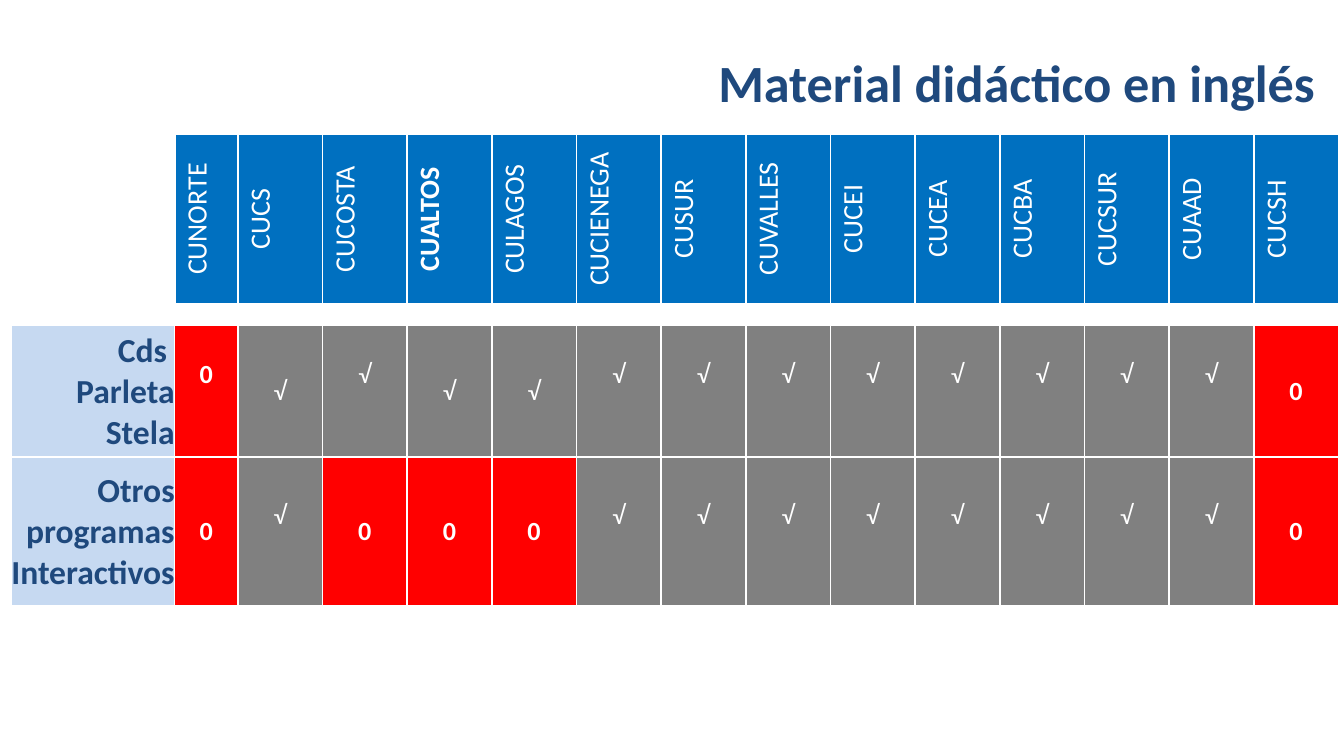
from lxml.etree import SubElement
from pptx import Presentation
from pptx.dml.color import RGBColor as RGB
from pptx.enum.text import MSO_ANCHOR as ANCHOR, PP_ALIGN as ALIGN
from pptx.oxml.ns import qn
from pptx.util import Inches, Pt

COLORS = {"navy": "1F497D", "blue": "0070C0", "pale": "C6D9F1",
          "red": "FF0000", "gray": "808080", "white": "FFFFFF"}
FONT = "Calibri"

# Column grid shared by both tables
LEFT, LABEL_W, FIRST_W, CENTER_W = 0.08, 1.22, 0.47, 0.63
CENTERS = ["CUNORTE", "CUCS", "CUCOSTA", "CUALTOS", "CULAGOS", "CUCIENEGA", "CUSUR",
           "CUVALLES", "CUCEI", "CUCEA", "CUCBA", "CUCSUR", "CUAAD", "CUCSH"]
CENTER_COLS = [FIRST_W] + [CENTER_W] * (len(CENTERS) - 1)
HIGHLIGHT = "CUALTOS"

# Label paragraphs, one mark per center, columns whose mark sits half a line higher
ROWS = [(["Cds ", "Parleta Stela"], "0√√√√√√√√√√√√0", {0, 2, *range(5, 13)}),
        (["Otros programas Interactivos"], "0√000√√√√√√√√0", {1, *range(5, 13)})]
LINE_H = 0.24


def color(name):
    return RGB.from_string(COLORS[name])


def write(tf, lines, size, font_color, bold, align):
    for i, line in enumerate(lines):
        p = tf.paragraphs[0] if i == 0 else tf.add_paragraph()
        p.text = line
        p.alignment = align
        p.font.name, p.font.size, p.font.bold = FONT, Pt(size), bold
        p.font.color.rgb = color(font_color)


def add_borders(cell):
    tcPr = cell._tc.get_or_add_tcPr()
    for side in "LRTB":
        ln = SubElement(tcPr, qn(f"a:ln{side}"), w=str(Pt(1)))
        fill = SubElement(ln, qn("a:solidFill"))
        SubElement(fill, qn("a:srgbClr"), val=COLORS["white"])


def style_cell(cell, lines, size, font_color, bold, fill, align=ALIGN.CENTER,
               side=0.1, lift=0):
    add_borders(cell)
    cell.fill.solid()
    cell.fill.fore_color.rgb = color(fill)
    cell.margin_left = cell.margin_right = Inches(side)
    cell.margin_top, cell.margin_bottom = Inches(0.04), Inches(0.04 + lift)
    write(cell.text_frame, lines, size, font_color, bold, align)


def add_grid(s, x, y, cols, rows):
    box = [Inches(v) for v in (x, y, sum(cols), sum(rows))]
    table = s.shapes.add_table(len(rows), len(cols), *box).table
    table.first_row = table.horz_banding = False
    for col, w in zip(table.columns, cols):
        col.width = Inches(w)
    for row, h in zip(table.rows, rows):
        row.height = Inches(h)
    return table


def add_title(s, x, y, w, h):
    tf = s.shapes.add_textbox(*[Inches(v) for v in (x, y, w, h)]).text_frame
    tf.word_wrap = True
    tf.vertical_anchor = ANCHOR.MIDDLE
    write(tf, ["Material didáctico en inglés"], 28, "navy", True, ALIGN.RIGHT)


def add_center_header(s, x, y, h):
    table = add_grid(s, x, y, CENTER_COLS, [h])
    for i, name in enumerate(CENTERS):
        cell = table.cell(0, i)
        style_cell(cell, [name], 15, "white", name == HIGHLIGHT, "blue")
        cell._tc.get_or_add_tcPr().set("vert", "vert270")


def add_material_table(s, x, y, heights):
    table = add_grid(s, x, y, [LABEL_W] + CENTER_COLS, heights)
    for r, (label, marks, raised) in enumerate(ROWS):
        style_cell(table.cell(r, 0), label, 18, "navy", True, "pale", ALIGN.RIGHT, side=0)
        for c, mark in enumerate(marks):
            missing = mark == "0"
            style_cell(table.cell(r, c + 1), [mark], 14, "white", missing,
                       "red" if missing else "gray", lift=LINE_H if c in raised else 0)
        for cell in table.rows[r].cells:
            cell.vertical_anchor = ANCHOR.MIDDLE


def main():
    prs = Presentation()
    # Widescreen, 16:9
    prs.slide_width = Inches(10)
    prs.slide_height = prs.slide_width * 9 // 16
    s = prs.slides.add_slide(prs.slide_layouts[6])
    add_title(s, 0.59, 0.14, 9.29, 0.94)
    add_material_table(s, LEFT, 2.42, [0.92, 1.11])
    add_center_header(s, LEFT + LABEL_W, 1, 1.26)
    prs.save("out.pptx")


if __name__ == "__main__":
    main()
